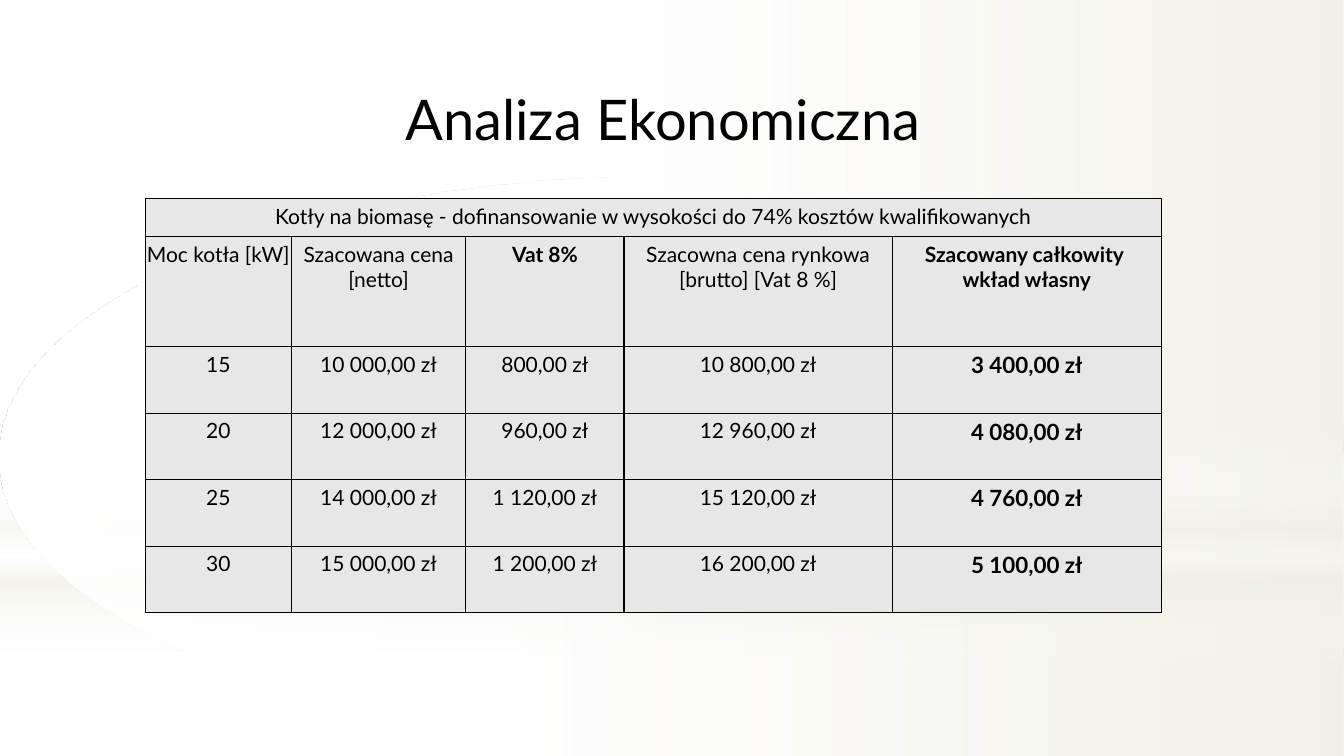
"""Build the slide with the cost table for biomass boilers."""
from dataclasses import dataclass

from pptx import Presentation
from pptx.dml.color import RGBColor as RGB
from pptx.enum.shapes import MSO_SHAPE as Form
from pptx.enum.text import MSO_ANCHOR as Anchor, PP_ALIGN as Align
from pptx.oxml import parse_xml as to_xml
from pptx.oxml.ns import nsdecls, qn
from pptx.util import Inches, Pt


@dataclass(frozen=True)
class Theme:
    font: str = "Lato"
    ink: str = "000000"
    white: str = "FFFFFF"
    sand: str = "EEECE1"
    cell: str = "E7E7E7"
    head: float = 40
    body: float = 15
    total: float = 16
    line: float = 0.96


def apply(item, form):
    for name, value in form.items():
        setattr(item, name, value)


class Deck:
    def __init__(self, theme):
        self.theme = theme
        self.show = Presentation()
        apply(self.show, {"slide_width": Inches(13.33), "slide_height": Inches(7.5)})
        self.slide = self.show.slides.add_slide(self.show.slide_layouts[5])

    def label(self, frame, text, size, bold=False, align=Align.CENTER):
        frame.text = text
        para = frame.paragraphs[0]
        para.alignment = align
        for run in para.runs:
            apply(run.font, {"name": self.theme.font, "size": Pt(size), "bold": bold})
            run.font.color.rgb = RGB.from_string(self.theme.ink)

    def shade(self, form, box, stops, angle=0):
        shape = self.slide.shapes.add_shape(form, *map(Inches, box))
        shape.shadow.inherit = False
        shape.line.fill.background()
        shape.fill.gradient()
        marks = "".join(
            f'<a:gs pos="{pos * 1000}"><a:srgbClr val="{color}">'
            f'<a:alpha val="{alpha * 1000}"/></a:srgbClr></a:gs>'
            for pos, color, alpha in stops)
        props = shape.element.spPr
        props.replace(props.find(qn("a:gradFill")), to_xml(
            f'<a:gradFill {nsdecls("a")} rotWithShape="1"><a:gsLst>{marks}</a:gsLst>'
            f'<a:lin ang="{angle * 60000}" scaled="0"/></a:gradFill>'))

    def title(self, text, box):
        shape = self.slide.shapes.title
        shape.element.getparent().append(shape.element)
        apply(shape, dict(zip(("left", "top", "width", "height"), map(Inches, box))))
        apply(shape.text_frame, {"word_wrap": True, "vertical_anchor": Anchor.MIDDLE})
        self.label(shape.text_frame, text, self.theme.head, align=Align.LEFT)

    def border(self, cell):
        props = cell._tc.get_or_add_tcPr()
        for side in "LRTB":
            props.append(to_xml(
                f'<a:ln{side} {nsdecls("a")} w="{Pt(self.theme.line)}"><a:solidFill>'
                f'<a:srgbClr val="{self.theme.ink}"/></a:solidFill></a:ln{side}>'))

    def table(self, spot, cols, highs, rows):
        size = sum(cols), sum(highs)
        grid = self.slide.shapes.add_table(
            len(highs), len(cols), *map(Inches, (*spot, *size))).table
        for col, width in zip(grid.columns, cols):
            col.width = Inches(width)
        for row, high in zip(grid.rows, highs):
            row.height = Inches(high)
        pads = {"margin_left": Inches(0.01), "margin_right": Inches(0.01),
                "margin_top": Inches(0.05), "margin_bottom": Inches(0.05),
                "vertical_anchor": Anchor.TOP}
        for cell in grid.iter_cells():
            apply(cell, pads)
            self.border(cell)
            cell.fill.solid()
            cell.fill.fore_color.rgb = RGB.from_string(self.theme.cell)
        grid.cell(0, 0).merge(grid.cell(0, len(cols) - 1))
        for r, row in enumerate(rows):
            for c, text in enumerate(row):
                last = c == len(cols) - 1
                size = self.theme.total if last and r > 1 else self.theme.body
                bold = last or (r == 1 and c == 2)
                self.label(grid.cell(r, c).text_frame, text, size, bold)


def main():
    theme = Theme()
    deck = Deck(theme)
    white, sand = theme.white, theme.sand
    deck.shade(Form.RECTANGLE, (0, 5.58, 13.33, 1.92),
               [(0, white, 91), (37, white, 76), (100, sand, 79)])
    deck.shade(Form.RECTANGLE, (0, 0, 13.33, 5.58),
               [(0, white, 89), (48, white, 62), (100, sand, 79)])
    deck.shade(Form.RECTANGLE, (0, 4.12, 13.33, 2.5),
               [(0, white, 0), (29, white, 30), (45, sand, 40),
                (55, white, 26), (65, sand, 60), (100, white, 0)], 90)
    deck.shade(Form.OVAL, (0, 1.75, 13.33, 5.58), [(0, white, 100), (56, white, 0)])
    deck.title("Analiza Ekonomiczna", (3.92, 0.79, 5.87, 0.77))
    deck.table((1.44, 1.97), [1.45, 1.73, 1.57, 2.66, 2.67],
               [0.38, 1.09] + [0.66] * 4, [
        ["Kotły na biomasę - dofinansowanie w wysokości do 74% kosztów kwalifikowanych"],
        ["Moc kotła [kW]", "Szacowana cena [netto]", "Vat 8%",
         "Szacowna cena rynkowa [brutto] [Vat 8 %]", "Szacowany całkowity \vwkład własny"],
        ["15", "10 000,00 zł", "800,00 zł", "10 800,00 zł", "3 400,00 zł"],
        ["20", "12 000,00 zł", "960,00 zł", "12 960,00 zł", "4 080,00 zł"],
        ["25", "14 000,00 zł", "1 120,00 zł", "15 120,00 zł", "4 760,00 zł"],
        ["30", "15 000,00 zł", "1 200,00 zł", "16 200,00 zł", "5 100,00 zł"],
    ])
    deck.show.save("out.pptx")


if __name__ == "__main__":
    main()
